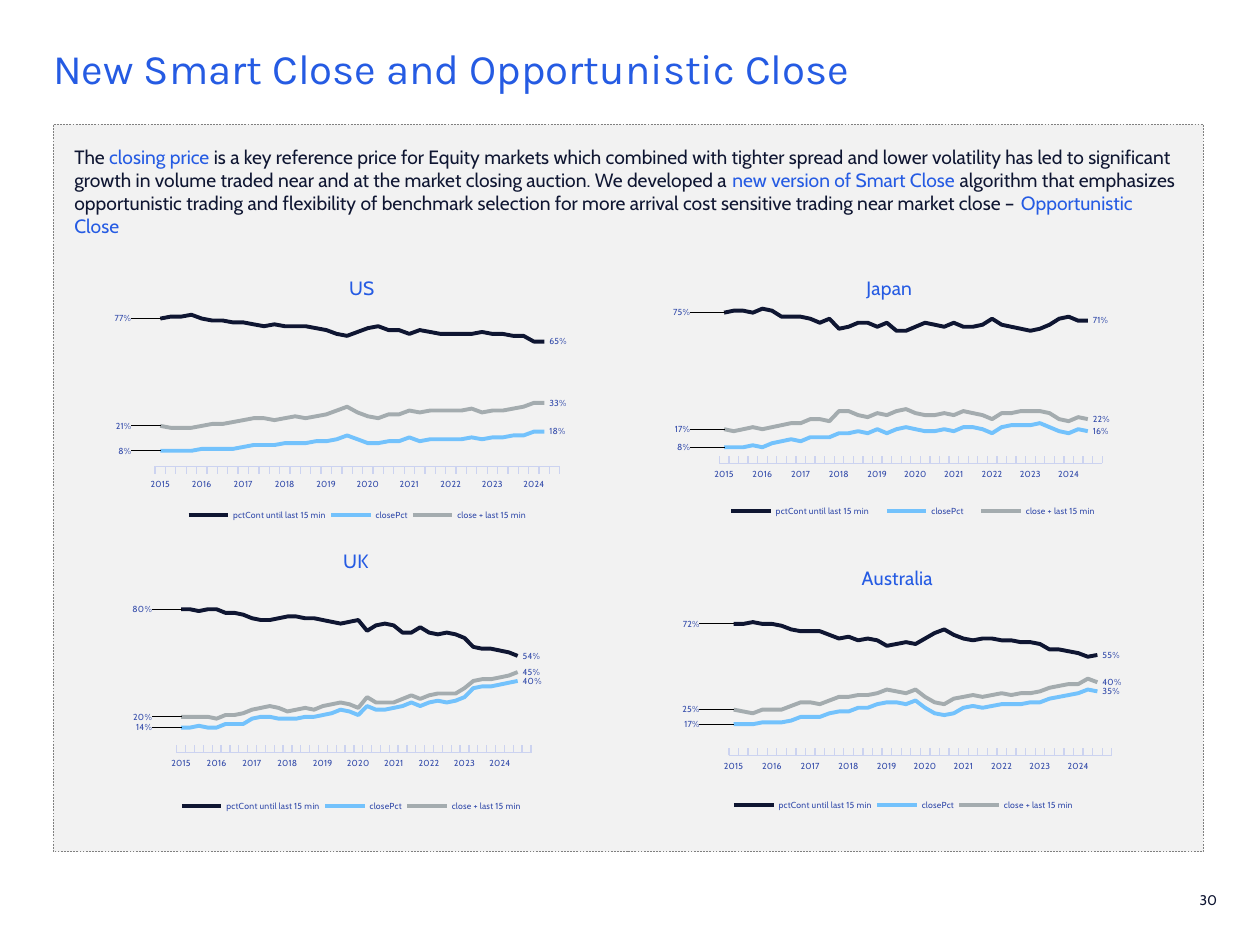
from dataclasses import dataclass

from lxml import etree
from pptx import Presentation
from pptx.chart.data import CategoryChartData
from pptx.dml.color import RGBColor
from pptx.enum.chart import XL_CHART_TYPE, XL_LABEL_POSITION, XL_LEGEND_POSITION, XL_TICK_MARK
from pptx.enum.dml import MSO_LINE
from pptx.enum.shapes import MSO_SHAPE
from pptx.enum.text import MSO_ANCHOR, PP_ALIGN
from pptx.oxml import parse_xml
from pptx.oxml.ns import qn
from pptx.util import Cm, Pt


@dataclass(frozen=True)
class Theme:
    ink: RGBColor = RGBColor.from_string("0F1632")
    accent: RGBColor = RGBColor.from_string("255BE3")
    label: RGBColor = RGBColor.from_string("334BAA")
    axis: RGBColor = RGBColor.from_string("CCD3F0")
    panel: RGBColor = RGBColor.from_string("F2F2F2")
    border: RGBColor = RGBColor.from_string("808080")
    sky: RGBColor = RGBColor.from_string("73C2FC")
    grey: RGBColor = RGBColor.from_string("A4ACAF")
    heading_font: str = "Karla"
    body_font: str = "Cabin"
    heading: float = 24
    body: float = 11
    number: float = 8
    small: float = 5


THEME = Theme()
SERIES = [("pctCont until last 15 min", THEME.ink),
          ("closePct", THEME.sky),
          ("close + last 15 min", THEME.grey)]

# Quarterly shares in percent, in the order of SERIES
US = [
    [77, 78, 78, 79, 77, 76, 76, 75, 75, 74, 73, 74, 73, 73, 73, 72, 71, 69, 68, 70,
     72, 73, 71, 71, 69, 71, 70, 69, 69, 69, 69, 70, 69, 69, 68, 68, 65, 65],
    [8, 8, 8, 8, 9, 9, 9, 9, 10, 11, 11, 11, 12, 12, 12, 13, 13, 14, 16, 14,
     12, 12, 13, 13, 15, 13, 14, 14, 14, 14, 15, 14, 15, 15, 16, 16, 18, 18],
    [21, 20, 20, 20, 21, 22, 22, 23, 24, 25, 25, 24, 25, 26, 25, 26, 27, 29, 31, 28,
     26, 25, 27, 27, 29, 28, 29, 29, 29, 29, 30, 28, 29, 29, 30, 31, 33, 33],
]
JAPAN = [
    [75, 76, 76, 75, 77, 76, 73, 73, 73, 72, 70, 72, 67, 68, 70, 70, 68, 70, 66, 66,
     68, 70, 69, 68, 70, 68, 68, 69, 72, 69, 68, 67, 66, 67, 69, 72, 73, 71, 71],
    [8, 8, 8, 9, 8, 10, 11, 12, 11, 13, 13, 13, 15, 15, 16, 15, 17, 15, 17, 18,
     17, 16, 16, 17, 16, 18, 18, 17, 15, 18, 19, 19, 19, 20, 18, 16, 15, 17, 16],
    [17, 16, 17, 18, 17, 18, 19, 20, 20, 22, 22, 21, 26, 26, 24, 23, 25, 24, 26, 27,
     25, 24, 24, 25, 24, 26, 25, 24, 22, 25, 25, 26, 26, 26, 25, 22, 21, 23, 22],
]
UK = [
    [80, 80, 79, 80, 80, 78, 78, 77, 75, 74, 74, 75, 76, 76, 75, 75, 74, 73, 72, 73,
     74, 68, 71, 72, 71, 67, 67, 70, 67, 66, 67, 66, 64, 59, 58, 58, 57, 56, 54],
    [14, 14, 15, 14, 14, 16, 16, 16, 19, 20, 20, 19, 19, 19, 20, 20, 21, 22, 24, 23,
     21, 26, 24, 24, 25, 26, 28, 26, 28, 29, 28, 29, 31, 36, 37, 37, 38, 39, 40],
    [20, 20, 20, 20, 19, 21, 21, 22, 24, 25, 26, 25, 23, 24, 25, 24, 26, 27, 28, 27,
     25, 31, 28, 28, 28, 30, 32, 30, 32, 33, 33, 33, 36, 40, 41, 41, 42, 43, 45],
]
AUSTRALIA = [
    [72, 72, 73, 72, 72, 71, 69, 68, 68, 68, 66, 64, 65, 63, 64, 63, 60, 61, 62, 61,
     64, 67, 69, 66, 64, 63, 64, 64, 63, 63, 62, 62, 61, 58, 58, 57, 56, 54, 55],
    [17, 17, 17, 18, 18, 18, 19, 21, 21, 21, 23, 24, 24, 26, 26, 28, 29, 29, 28, 30,
     26, 23, 22, 23, 26, 27, 26, 27, 28, 28, 28, 29, 29, 31, 32, 33, 34, 36, 35],
    [25, 24, 23, 25, 25, 25, 27, 29, 29, 28, 30, 32, 32, 33, 33, 34, 36, 35, 34, 36,
     32, 29, 28, 31, 32, 33, 32, 33, 34, 33, 34, 34, 35, 37, 38, 39, 39, 42, 40],
]


def style_font(font, size, color, name=THEME.body_font):
    font.size, font.name, font.bold = Pt(size), name, False
    font.color.rgb = color


def add_text(slide, box, runs, size, font=THEME.body_font):
    """Add one paragraph made of (text, color) runs and return its frame."""
    frame = slide.shapes.add_textbox(*map(Cm, box)).text_frame
    frame.word_wrap = True
    frame.margin_left = frame.margin_right = frame.margin_top = frame.margin_bottom = 0
    for text, color in runs:
        run = frame.paragraphs[0].add_run()
        run.text = text
        style_font(run.font, size, color, font)
    return frame


def add_panel(slide):
    panel = slide.shapes.add_shape(MSO_SHAPE.RECTANGLE, Cm(1.07), Cm(2.51), Cm(23.19), Cm(14.66))
    panel.shadow.inherit = False
    panel.fill.solid()
    panel.fill.fore_color.rgb = THEME.panel
    panel.line.color.rgb = THEME.border
    panel.line.width = Pt(0.25)
    panel.line.dash_style = MSO_LINE.DASH


def place(element, after=None, inner=False, **fractions):
    """Give a chart part a manual layout, behind its child named by after."""
    for old in element.findall(qn("c:layout")):
        element.remove(old)
    layout = etree.Element(qn("c:layout"))
    manual = etree.SubElement(layout, qn("c:manualLayout"))
    settings = {"layoutTarget": "inner"} if inner else {}
    if after != "c:idx":
        settings |= {"xMode": "edge", "yMode": "edge"}
    for tag, value in (settings | fractions).items():
        etree.SubElement(manual, qn(f"c:{tag}")).set("val", str(value))
    index = 0 if after is None else element.index(element.find(qn(after))) + 1
    element.insert(index, layout)


def label_ends(series, last, shift):
    """Label the first point, set off by a leader line, and the last point."""
    for index, side in ((0, XL_LABEL_POSITION.LEFT), (last, XL_LABEL_POSITION.RIGHT)):
        label = series.points[index].data_label
        style_font(label.font, THEME.small, THEME.label)
        label.position = side
    series.data_labels.show_value = False
    labels = series.data_labels._element
    place(labels.find(qn("c:dLbl")), "c:idx", x=shift, y=0)
    labels.append(parse_xml(
        '<c:extLst xmlns:c="http://schemas.openxmlformats.org/drawingml/2006/chart">'
        '<c:ext uri="{CE6537A1-D6FC-4f65-9D91-7224C49458BB}" '
        'xmlns:c15="http://schemas.microsoft.com/office/drawing/2012/chart">'
        '<c15:showLeaderLines val="1"/></c:ext></c:extLst>'))


def add_market_chart(slide, market, shares, box, plot, title, legend, shift,
                     quarters=40, top=0.9, tick=XL_TICK_MARK.INSIDE):
    data = CategoryChartData(number_format="0%")
    data.categories = ["" if q % 4 else str(2015 + q // 4) for q in range(quarters)]
    for (name, _), percents in zip(SERIES, shares):
        padding = [None] * (quarters - len(percents))
        data.add_series(name, [p / 100 for p in percents] + padding)
    chart = slide.shapes.add_chart(XL_CHART_TYPE.LINE, *map(Cm, box), data).chart
    style_font(chart.font, THEME.small, THEME.ink)
    place(chart._chartSpace.chart.plotArea, inner=True, **dict(zip("xywh", plot)))

    # Title and legend
    chart.has_title = True
    heading = chart.chart_title.text_frame
    heading.text = market
    style_font(heading.paragraphs[0].runs[0].font, THEME.body, THEME.accent)
    place(chart.chart_title._element, "c:tx", **dict(zip("xy", title)))
    chart.has_legend = True
    chart.legend.position = XL_LEGEND_POSITION.BOTTOM
    chart.legend.include_in_layout = False
    style_font(chart.legend.font, THEME.small, THEME.label)
    place(chart.legend._element, "c:legendPos", **dict(zip("xywh", legend)))

    # Axes
    values, years = chart.value_axis, chart.category_axis
    values.minimum_scale, values.maximum_scale = 0, top
    values.has_major_gridlines = values.visible = False
    years.major_tick_mark = tick
    years.format.line.color.rgb = THEME.axis
    years.format.line.width = Pt(0.75)
    style_font(years.tick_labels.font, THEME.small, THEME.label)

    # Lines
    chart.plots[0].vary_by_categories = False
    for series, (_, color), percents in zip(chart.plots[0].series, SERIES, shares):
        series.smooth = False
        series.format.line.color.rgb = color
        series.format.line.width = Pt(2.25)
        label_ends(series, len(percents) - 1, shift)


def main():
    prs = Presentation()
    prs.slide_width, prs.slide_height = Cm(25.4), Cm(19.05)
    slide = prs.slides.add_slide(prs.slide_layouts[6])
    add_panel(slide)

    # Heading, page number and introduction
    heading = add_text(slide, (1.07, 0.97, 24.18, 1.35),
                       [("New Smart Close and Opportunistic Close", THEME.accent)],
                       THEME.heading, THEME.heading_font)
    heading.paragraphs[0].line_spacing = 0.9
    number = add_text(slide, (23.98, 17.63, 0.56, 1.02), [("30", THEME.ink)], THEME.number)
    number.vertical_anchor = MSO_ANCHOR.MIDDLE
    number.paragraphs[0].alignment = PP_ALIGN.RIGHT
    intro = add_text(slide, (1.5, 2.92, 22.33, 2.03), [
        ("The ", THEME.ink), ("closing price ", THEME.accent),
        ("is a key reference price for Equity markets which combined with tighter spread and "
         "lower volatility has led to significant growth in volume traded near and at the "
         "market closing auction. We developed a ", THEME.ink),
        ("new version of Smart Close", THEME.accent),
        (" algorithm that emphasizes opportunistic trading and flexibility of benchmark selection "
         "for more arrival cost sensitive trading near market close – ", THEME.ink),
        ("Opportunistic Close", THEME.accent)], THEME.body)
    intro.paragraphs[0].space_after = Pt(5)

    # Market charts
    left, right, width = 2.31, 13.44, 9.65
    add_market_chart(slide, "UK", UK, (left, 10.62, width, 5.92), (0.13, 0.22, 0.74, 0.55),
                     (0.47, 0.06), (0.13, 0.93, 0.73, 0.06), -0.05)
    add_market_chart(slide, "Japan", JAPAN, (right, 5.08, width, 5.61), (0.11, 0.11, 0.8, 0.65),
                     (0.41, 0.07), (0.1, 0.9, 0.83, 0.06), -0.06)
    add_market_chart(slide, "Australia", AUSTRALIA, (right, 10.87, width, 5.66),
                     (0.13, 0.12, 0.8, 0.65), (0.4, 0.08), (0.13, 0.93, 0.73, 0.06), -0.06, top=1)
    add_market_chart(slide, "US", US, (left, 5.08, width, 5.61), (0.08, 0.15, 0.85, 0.62),
                     (0.48, 0.07), (0.14, 0.93, 0.73, 0.06), -0.05,
                     quarters=39, tick=XL_TICK_MARK.OUTSIDE)
    prs.save("out.pptx")


if __name__ == "__main__":
    main()
